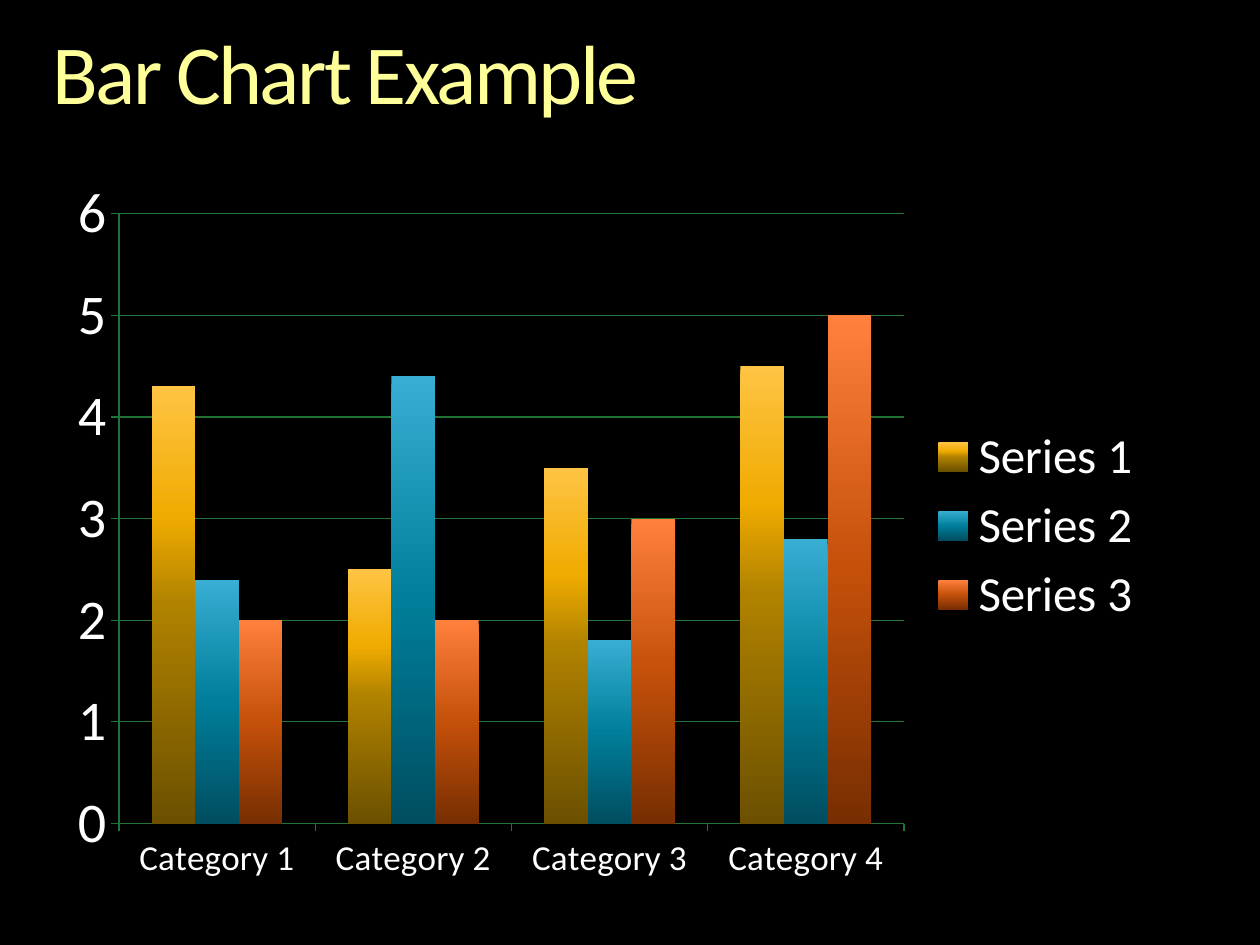
from copy import deepcopy

from lxml.etree import SubElement
from pptx import Presentation
from pptx.chart.data import CategoryChartData
from pptx.dml.color import RGBColor
from pptx.enum.chart import XL_CHART_TYPE, XL_LEGEND_POSITION, XL_TICK_MARK
from pptx.enum.text import MSO_ANCHOR, PP_ALIGN
from pptx.oxml.ns import qn
from pptx.util import Pt

# Content
HEADING = "Bar Chart Example"
CATEGORIES = ["Category 1", "Category 2", "Category 3", "Category 4"]
SERIES = {
    "Series 1": (4.3, 2.5, 3.5, 4.5),
    "Series 2": (2.4, 4.4, 1.8, 2.8),
    "Series 3": (2, 2, 3, 5),
}

# Style
FONT = "Calibri"
BLACK = RGBColor(0x00, 0x00, 0x00)
WHITE = RGBColor(0xFF, 0xFF, 0xFF)
YELLOW = RGBColor(0xFF, 0xFF, 0x99)
GREEN = RGBColor(0x1F, 0x73, 0x35)
# Gradient stops from top to bottom: (position, colour)
BAR_GRADIENTS = [
    [(0, RGBColor(0xFF, 0xC4, 0x44)), (0.3, RGBColor(0xF0, 0xAB, 0x00)),
     (0.5, RGBColor(0xB0, 0x82, 0x00)), (1, RGBColor(0x6C, 0x50, 0x00))],
    [(0, RGBColor(0x38, 0xAE, 0xD2)), (0.5, RGBColor(0x00, 0x7E, 0x9B)),
     (1, RGBColor(0x00, 0x4E, 0x60))],
    [(0, RGBColor(0xFF, 0x80, 0x3C)), (0.5, RGBColor(0xC4, 0x50, 0x0A)),
     (1, RGBColor(0x78, 0x2E, 0x02))],
]
PLOT_AREA = {"x": 0.06, "y": 0.07, "w": 0.71, "h": 0.84}


def fill_gradient(fill, stops):
    fill.gradient()
    fill.gradient_angle = 270
    stop_list = fill._fill._gradFill.find(qn("a:gsLst"))
    while len(stop_list) < len(stops):
        stop_list.append(deepcopy(stop_list[0]))
    for stop, (position, colour) in zip(fill.gradient_stops, stops):
        stop.position = position
        stop.color.rgb = colour


def draw_line(line):
    line.color.rgb = GREEN
    line.width = Pt(0.75)


def place_plot(chart):
    plot_area = chart._chartSpace.chart.plotArea
    layout = plot_area.find(qn("c:layout"))
    if layout is None:
        layout = plot_area.makeelement(qn("c:layout"))
        plot_area.insert(0, layout)
    manual = SubElement(layout, qn("c:manualLayout"))
    settings = {"layoutTarget": "inner", "xMode": "edge", "yMode": "edge", **PLOT_AREA}
    for name, value in settings.items():
        SubElement(manual, qn(f"c:{name}")).set("val", str(value))


presentation = Presentation()
presentation.slide_width, presentation.slide_height = Pt(720), Pt(540)
slide = presentation.slides.add_slide(presentation.slide_layouts[5])
slide.background.fill.solid()
slide.background.fill.fore_color.rgb = BLACK

# Title
title = slide.shapes.title
title.left, title.top, title.width, title.height = Pt(30), Pt(18), Pt(660), Pt(52.5)
frame = title.text_frame
frame.text = HEADING
frame.margin_left = frame.margin_right = frame.margin_top = frame.margin_bottom = 0
frame.vertical_anchor = MSO_ANCHOR.TOP
heading = frame.paragraphs[0]
heading.alignment = PP_ALIGN.LEFT
heading.line_spacing = 0.9
heading_run = heading.runs[0]
heading_run.font.name = FONT
heading_run.font.size = Pt(48)
heading_run.font.color.rgb = YELLOW
heading_run.font._element.set("spc", "-150")

# Chart
chart_data = CategoryChartData()
chart_data.categories = CATEGORIES
for name, values in SERIES.items():
    chart_data.add_series(name, values)
chart = slide.shapes.add_chart(
    XL_CHART_TYPE.COLUMN_CLUSTERED, Pt(30), Pt(93), Pt(632), Pt(415), chart_data
).chart
chart.has_title = False
chart.font.name = FONT
chart.font.size = Pt(18)
chart.font.color.rgb = WHITE
place_plot(chart)

# Bars
plot = chart.plots[0]
plot.gap_width = 150
plot.overlap = 0
plot.vary_by_categories = False
for series, stops in zip(plot.series, BAR_GRADIENTS):
    fill_gradient(series.format.fill, stops)

# Axes
for axis, label_size in ((chart.category_axis, 20), (chart.value_axis, 32)):
    axis.major_tick_mark = XL_TICK_MARK.OUTSIDE
    axis.tick_labels.font.size = Pt(label_size)
    axis.tick_labels.font.name = FONT
    axis.tick_labels.font.color.rgb = WHITE
    draw_line(axis.format.line)
chart.value_axis.minimum_scale = 0
chart.value_axis.maximum_scale = 6
chart.value_axis.major_unit = 1
draw_line(chart.value_axis.major_gridlines.format.line)

# Legend
chart.has_legend = True
chart.legend.position = XL_LEGEND_POSITION.RIGHT
chart.legend.include_in_layout = False
chart.legend.font.size = Pt(28)
chart.legend.font.name = FONT
chart.legend.font.color.rgb = WHITE

presentation.save("out.pptx")
